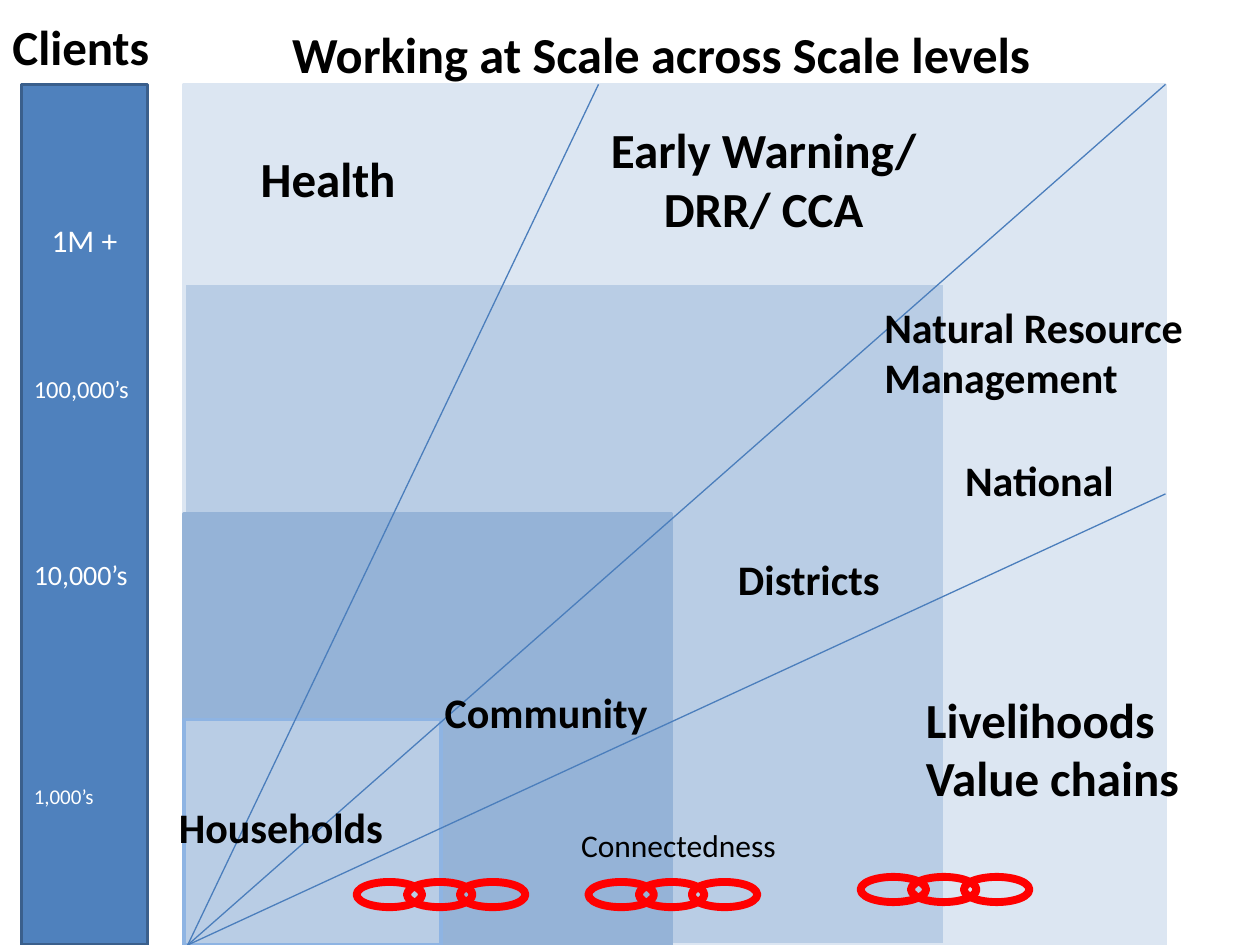
from dataclasses import dataclass

from lxml import etree
from pptx import Presentation
from pptx import util as u
from pptx.dml.color import RGBColor
from pptx.enum import shapes, text
from pptx.oxml.ns import qn

LEFT, CENTER = text.PP_ALIGN.LEFT, text.PP_ALIGN.CENTER


@dataclass(frozen=True)
class Theme:
    font: str = "Calibri"
    ink: str = "000000"
    white: str = "FFFFFF"
    pale: str = "DCE6F2"
    light: str = "B9CDE5"
    medium: str = "95B3D7"
    edge: str = "8EB4E3"
    bar: str = "4F81BD"
    bar_edge: str = "3A5F8C"
    ray: str = "4B7EBC"
    chain: str = "FF0000"
    title: float = 28.8
    sector: float = 28
    level: float = 24
    note: float = 18


class ScaleSlide:
    def __init__(self, slide, theme):
        self.slide = slide
        self.theme = theme

    def shape(self, kind, box, fill, line, weight, parent=None):
        holder = parent or self.slide
        item = holder.shapes.add_shape(kind, *map(u.Inches, box))
        item.shadow.inherit = False
        if fill:
            item.fill.solid()
            item.fill.fore_color.rgb = RGBColor.from_string(fill)
        else:
            item.fill.background()
        item.line.color.rgb = RGBColor.from_string(line)
        item.line.width = u.Pt(weight)
        return item

    def rect(self, box, fill, line):
        return self.shape(shapes.MSO_SHAPE.RECTANGLE, box, fill, line, 2)

    def ray(self, start, end):
        line = self.slide.shapes.add_connector(
            shapes.MSO_CONNECTOR.STRAIGHT, *map(u.Inches, start + end))
        line.line.color.rgb = RGBColor.from_string(self.theme.ray)
        line.line.width = u.Pt(0.75)
        etree.SubElement(line._element.spPr, qn("a:effectLst"))

    def run(self, paragraph, words, size, color, bold=False):
        run = paragraph.add_run()
        run.text = words
        run.font.name = self.theme.font
        run.font.size = u.Pt(size)
        run.font.bold = bold
        run.font.color.rgb = RGBColor.from_string(color)

    def label(self, box, lines, size, align=LEFT, wrap=True, bold=True, grow=True):
        frame = self.slide.shapes.add_textbox(*map(u.Inches, box)).text_frame
        frame.word_wrap = wrap
        if grow:
            frame.auto_size = text.MSO_AUTO_SIZE.SHAPE_TO_FIT_TEXT
        else:
            frame.vertical_anchor = text.MSO_ANCHOR.MIDDLE
        for i, words in enumerate(lines):
            paragraph = frame.add_paragraph() if i else frame.paragraphs[0]
            paragraph.alignment = align
            self.run(paragraph, words, size, self.theme.ink, bold)

    def chain(self, left, top):
        group = self.slide.shapes.add_group_shape()
        for offset in (0, 0.4, 0.82):
            self.shape(shapes.MSO_SHAPE.OVAL, (left + offset, top, 0.52, 0.2),
                       None, self.theme.chain, 4.5, group)

    def client_bar(self, box, steps):
        frame = self.rect(box, self.theme.bar, self.theme.bar_edge).text_frame
        frame.word_wrap = True
        frame.vertical_anchor = text.MSO_ANCHOR.MIDDLE
        for i, (words, size, gap, align) in enumerate(steps):
            paragraph = frame.add_paragraph() if i else frame.paragraphs[0]
            paragraph.alignment = align
            paragraph.space_before = u.Pt(gap)
            self.run(paragraph, words, size, self.theme.white)


def main():
    theme = Theme()
    deck = Presentation()
    deck.slide_width, deck.slide_height = u.Inches(10), u.Inches(7.5)
    page = ScaleSlide(deck.slides.add_slide(deck.slide_layouts[6]), theme)

    # Nested scale levels, all resting on the bottom left corner
    left, bottom, top, right = 1.46, 7.5, 0.67, 9.25
    levels = [
        (7.79, 6.83, theme.pale, theme.pale),
        (6.04, 5.25, theme.light, theme.pale),
        (3.87, 3.42, theme.medium, theme.medium),
        (2.04, 1.79, theme.light, theme.edge),
    ]
    for width, height, fill, line in levels:
        page.rect((left, bottom - height, width, height), fill, line)

    # Rays that split the sectors
    for end in ((right, top), (right, 3.92), (4.75, top)):
        page.ray((1.49, bottom), end)

    # Title and client bar
    page.label((0.75, 0.17, 9, 0.5), ["Working at Scale across Scale levels"],
               theme.title, CENTER, grow=False)
    page.label((0, 0.08, 1.39, 0.57), ["Clients"], theme.sector, wrap=False)
    page.client_bar((0.17, top, 1, bottom - top), [
        ("1M +", 18, 0, CENTER),
        ("100,000’s", 14, 66, LEFT),
        ("10,000’s", 16, 88, LEFT),
        ("1,000’s", 12, 110, LEFT),
    ])

    # Sectors
    page.label((1.97, 1.13, 1.42, 0.57), ["Health"], theme.sector)
    page.label((4.52, 0.9, 3.08, 1.04), ["Early Warning/ DRR/ CCA"],
               theme.sector, CENTER)
    page.label((6.92, 2.34, 3.26, 0.91), ["Natural Resource Management"], theme.level)
    page.label((7.25, 5.42, 2.65, 1.04), ["Livelihoods", "Value chains"], theme.sector)

    # Chains linking neighbouring levels
    for chain_left, chain_top in ((2.83, 7), (4.67, 7), (6.83, 6.96)):
        page.chain(chain_left, chain_top)
    page.label((3.93, 6.51, 2.91, 0.4), ["Connectedness"], theme.note, CENTER,
               bold=False)

    # Level names
    for name, x, y, width in (
        ("Community", 3.42, 5.4, 1.83),
        ("Districts", 5.75, 4.34, 1.34),
        ("Households", 1.31, 6.31, 1.84),
        ("National", 7.55, 3.56, 1.4),
    ):
        page.label((x, y, width, 0.5), [name], theme.level, CENTER, wrap=False)

    deck.save("out.pptx")


if __name__ == "__main__":
    main()
